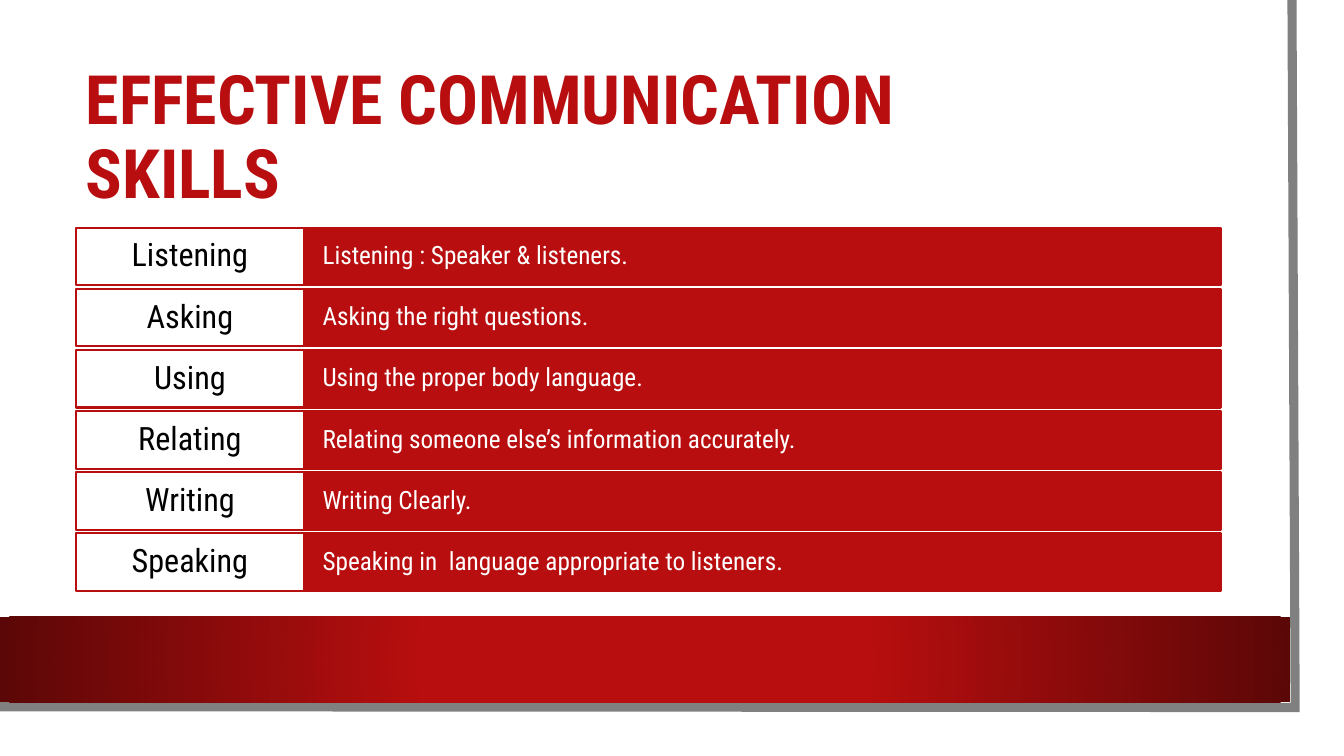
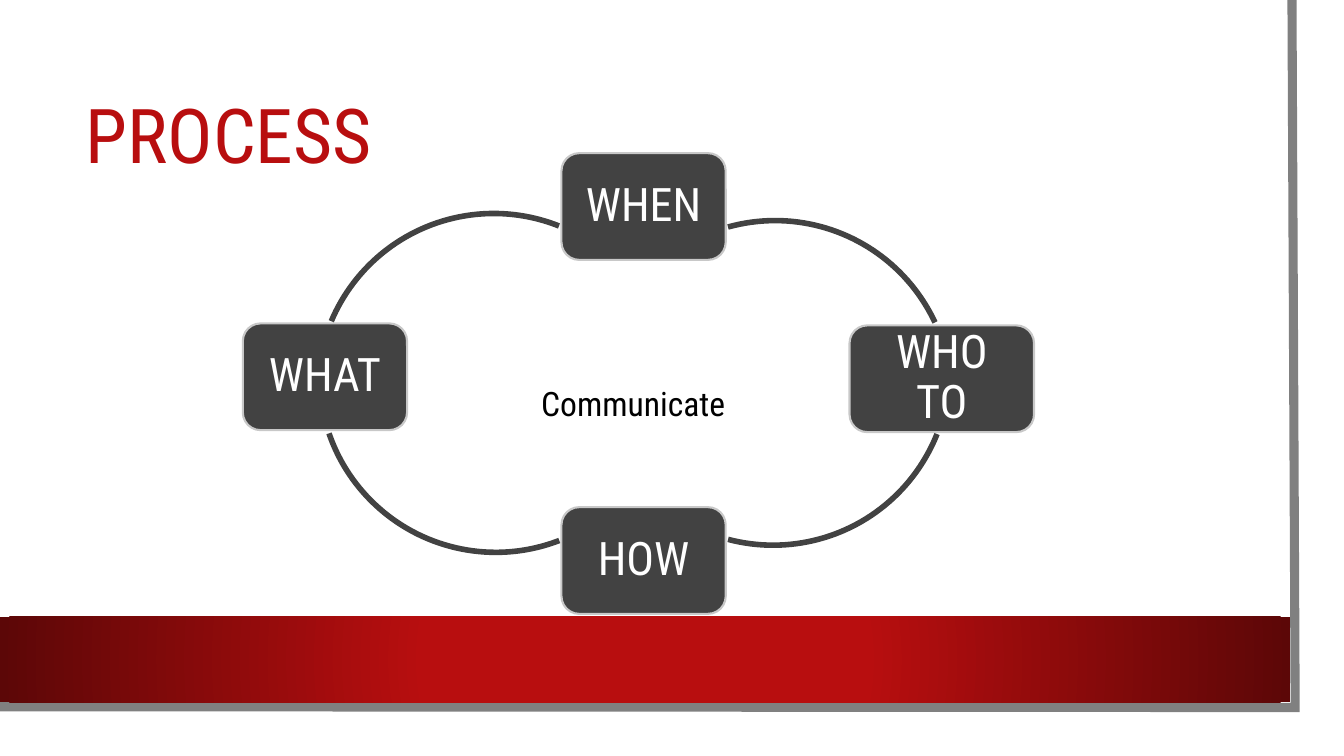
from dataclasses import dataclass

from lxml import etree
from pptx import Presentation
from pptx.dml.color import RGBColor
from pptx.enum.shapes import MSO_SHAPE
from pptx.enum.text import MSO_ANCHOR, PP_ALIGN
from pptx.oxml.ns import qn
from pptx.util import Cm, Pt

RECTANGLE = MSO_SHAPE.RECTANGLE
ROUNDED = MSO_SHAPE.ROUNDED_RECTANGLE
ARC = MSO_SHAPE.ARC
TOP = MSO_ANCHOR.TOP
MIDDLE = MSO_ANCHOR.MIDDLE
LEFT = PP_ALIGN.LEFT
CENTER = PP_ALIGN.CENTER

FONT = "Roboto Condensed"
RED = "B80E0F"
DARK_RED = "5C0707"
WHITE = "FFFFFF"
BLACK = "000000"
GREY = "808080"
CHARCOAL = "424242"
SILVER = "C8C8C8"

ROW_LEFT, ROW_TOP = 1.91, 5.74
LABEL_WIDTH, DETAIL_WIDTH = 5.76, 23.09
ROW_HEIGHT, ROW_GAP = 1.45, 0.09
NODE_HEIGHT = 2.69
ARC_SIZE = 8.89


@dataclass(frozen=True)
class Frame:
    left: float
    top: float
    width: float
    height: float

    def lengths(self) -> list:
        return [Cm(value) for value in (self.left, self.top, self.width, self.height)]


@dataclass(frozen=True)
class TextStyle:
    size: float
    color: str
    align: PP_ALIGN = LEFT
    anchor: MSO_ANCHOR = MIDDLE
    side_inset: float = 0.25
    end_inset: float = 0.13
    bold: bool = False
    spacing: float = 0.9


@dataclass(frozen=True)
class Skill:
    label: str
    detail: str


@dataclass(frozen=True)
class Node:
    text: str
    left: float
    top: float
    width: float = 4.14


@dataclass(frozen=True)
class Link:
    left: float
    top: float
    start: float
    end: float


LABEL_STYLE = TextStyle(23, BLACK, CENTER, side_inset=0.3, end_inset=0.15)
DETAIL_STYLE = TextStyle(18, WHITE, side_inset=0.46, end_inset=0.38)
NODE_STYLE = TextStyle(33, WHITE, CENTER, side_inset=0.36, end_inset=0.36)
CAPTION_STYLE = TextStyle(24, BLACK, anchor=TOP, spacing=1.0)

SKILLS = [
    Skill("Listening", "Listening : Speaker & listeners."),
    Skill("Asking", "Asking the right questions."),
    Skill("Using", "Using the proper body language."),
    Skill("Relating", "Relating someone else’s information accurately."),
    Skill("Writing", "Writing Clearly."),
    Skill("Speaking", "Speaking in  language appropriate to listeners."),
]

NODES = [
    Node("WHEN", 14.15, 3.86),
    Node("WHO TO", 21.41, 8.2, 4.65),
    Node("HOW", 14.15, 12.78),
    Node("WHAT", 6.12, 8.15),
]

LINKS = [
    Link(15.09, 5.56, 254.5, 335),
    Link(15.04, 4.85, 21.7, 104.8),
    Link(8.05, 5.03, 68.9, 161),
    Link(8, 5.38, 202.9, 291.7),
]


def color(value: str) -> RGBColor:
    return RGBColor.from_string(value)


def set_line(shape, line_color: str, width: float) -> None:
    shape.line.color.rgb = color(line_color)
    shape.line.width = Pt(width)


def write(box, lines: list[str], style: TextStyle) -> None:
    frame = box.text_frame
    frame.word_wrap = True
    frame.vertical_anchor = style.anchor
    frame.margin_left = frame.margin_right = Cm(style.side_inset)
    frame.margin_top = frame.margin_bottom = Cm(style.end_inset)
    para = frame.paragraphs[0]
    para.alignment = style.align
    para.line_spacing = style.spacing
    for index, line in enumerate(lines):
        if index:
            para.add_line_break()
        span = para.add_run()
        span.text = line
        span.font.name = FONT
        span.font.size = Pt(style.size)
        span.font.bold = style.bold
        span.font.color.rgb = color(style.color)


def add_text(page, frame: Frame, lines: list[str], style: TextStyle) -> None:
    write(page.shapes.add_textbox(*frame.lengths()), lines, style)


def add_panel(page, kind: MSO_SHAPE, frame: Frame, fill: str, outline: str,
              text: str, style: TextStyle) -> None:
    panel = page.shapes.add_shape(kind, *frame.lengths())
    panel.shadow.inherit = False
    panel.fill.solid()
    panel.fill.fore_color.rgb = color(fill)
    set_line(panel, outline, 1.5)
    write(panel, [text], style)


def add_edge(page) -> None:
    builder = page.shapes.build_freeform(Cm(32.56), Cm(0))
    corners = [(Cm(32.64), Cm(17.83)), (Cm(-0.08), Cm(17.81))]
    builder.add_line_segments(corners, close=False)
    edge = builder.convert_to_shape()
    edge.shadow.inherit = False
    edge.fill.background()
    set_line(edge, GREY, 6.5)
    etree.SubElement(edge.line._get_or_add_ln(), qn("a:miter"), lim="800000")


def add_band(page) -> None:
    band = page.shapes.add_shape(RECTANGLE, *Frame(0, 15.54, 32.51, 2.16).lengths())
    band.shadow.inherit = False
    band.line.fill.background()
    band.fill.gradient()
    stops = zip(band.fill.gradient_stops, [(0.34, RED), (1, DARK_RED)])
    for stop, (position, stop_color) in stops:
        stop.position = position
        stop.color.rgb = color(stop_color)
    gradient = band._element.spPr.find(qn("a:gradFill"))
    gradient.remove(gradient.find(qn("a:lin")))
    radial = etree.SubElement(gradient, qn("a:path"))
    radial.set("path", "circle")
    center = {side: "50000" for side in "ltrb"}
    etree.SubElement(radial, qn("a:fillToRect"), **center)


def add_page(deck, title: list[str], size: float, bold: bool = False):
    page = deck.slides.add_slide(deck.slide_layouts[6])
    add_edge(page)
    add_band(page)
    add_text(page, Frame(1.91, 1.91, 28.88, 3.2), title, TextStyle(size, RED, bold=bold))
    return page


def add_skill(page, skill: Skill, index: int) -> None:
    top = ROW_TOP + index * (ROW_HEIGHT + ROW_GAP)
    detail = Frame(ROW_LEFT + LABEL_WIDTH, top, DETAIL_WIDTH, ROW_HEIGHT)
    label = Frame(ROW_LEFT, top, LABEL_WIDTH, ROW_HEIGHT)
    add_panel(page, RECTANGLE, detail, RED, RED, skill.detail, DETAIL_STYLE)
    add_panel(page, RECTANGLE, label, WHITE, RED, skill.label, LABEL_STYLE)


def add_node(page, node: Node) -> None:
    frame = Frame(node.left, node.top, node.width, NODE_HEIGHT)
    add_panel(page, ROUNDED, frame, CHARCOAL, SILVER, node.text, NODE_STYLE)


def add_link(page, link: Link) -> None:
    frame = Frame(link.left, link.top, ARC_SIZE, ARC_SIZE)
    arc = page.shapes.add_shape(ARC, *frame.lengths())
    arc.shadow.inherit = False
    arc.fill.background()
    set_line(arc, CHARCOAL, 4)
    arc.adjustments[0] = link.start * 0.6
    arc.adjustments[1] = link.end * 0.6


def main() -> None:
    deck = Presentation()
    deck.slide_width = Cm(33.87)
    deck.slide_height = Cm(19.05)

    skills_page = add_page(deck, ["EFFECTIVE COMMUNICATION", "SKILLS"], 48.6, bold=True)
    for index, skill in enumerate(SKILLS):
        add_skill(skills_page, skill, index)

    process_page = add_page(deck, ["PROCESS"], 54)
    for node in NODES:
        add_node(process_page, node)
    for link in LINKS:
        add_link(process_page, link)
    add_text(process_page, Frame(13.39, 9.53, 5.54, 1.27), ["Communicate"], CAPTION_STYLE)

    deck.save("out.pptx")


if __name__ == "__main__":
    main()
